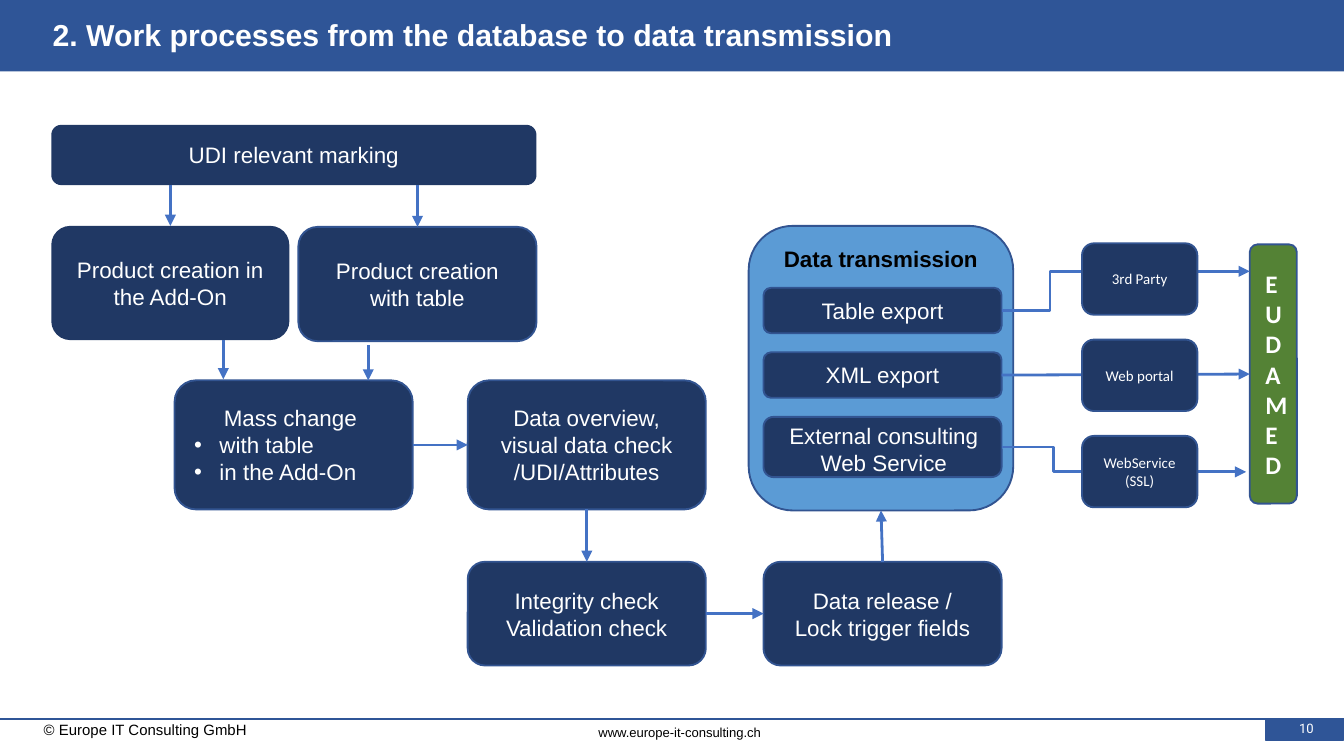
from lxml import etree
from pptx import Presentation
from pptx import util as u
from pptx.dml.color import RGBColor
from pptx.enum import shapes, text
from pptx.oxml import ns

COLORS = {
    "band": "2F5597", "navy": "203864", "sky": "5B9BD5", "green": "548235",
    "outline": "325491", "arrow": "4472C4", "white": "FFFFFF", "black": "000000",
}
COLORS = {name: RGBColor.from_string(value) for name, value in COLORS.items()}
CENTER, LEFT, RIGHT = text.PP_ALIGN.CENTER, text.PP_ALIGN.LEFT, text.PP_ALIGN.RIGHT
MIDDLE, TOP = text.MSO_ANCHOR.MIDDLE, text.MSO_ANCHOR.TOP
RECT = shapes.MSO_SHAPE.RECTANGLE
ROUND = shapes.MSO_SHAPE.ROUNDED_RECTANGLE
STRAIGHT, ELBOW = shapes.MSO_CONNECTOR.STRAIGHT, shapes.MSO_CONNECTOR.ELBOW

deck = Presentation()
deck.slide_width, deck.slide_height = u.Cm(25.4), u.Cm(14.29)
page = deck.slides.add_slide(deck.slide_layouts[5])


def add_box(place, lines=(), kind=ROUND, fill="navy", outline="outline", color="white",
            size=12, font="Arial", bold=False, align=CENTER, anchor=MIDDLE):
    lengths = [u.Cm(value) for value in place]
    if kind:
        box = page.shapes.add_shape(kind, *lengths)
        box.shadow.inherit = False
        box.fill.solid()
        box.fill.fore_color.rgb = COLORS[fill]
        if outline:
            box.line.color.rgb = COLORS[outline]
            box.line.width = u.Pt(1)
        else:
            box.line.fill.background()
    else:
        box = page.shapes.add_textbox(*lengths)
    frame = box.text_frame
    frame.word_wrap = True
    frame.vertical_anchor = anchor
    for number, line in enumerate(lines):
        para = frame.add_paragraph() if number else frame.paragraphs[0]
        para.alignment = align
        span = para.add_run()
        span.text = line
        for key, value in {"size": u.Pt(size), "name": font, "bold": bold}.items():
            setattr(span.font, key, value)
        span.font.color.rgb = COLORS[color]
    return box


def add_line(start, end, kind=STRAIGHT, color="arrow", arrow=True, bend=None):
    points = [u.Cm(value) for point in (start, end) if isinstance(point[0], (int, float))
              for value in point]
    points = points if len(points) == 4 else (points * 2 or [0] * 4)
    line = page.shapes.add_connector(kind, *points)
    for point, connect in ((start, line.begin_connect), (end, line.end_connect)):
        if not isinstance(point[0], (int, float)):
            connect(*point)
    line.line.color.rgb = COLORS[color]
    line.line.width = u.Pt(1.5)
    properties = line.element.spPr
    if arrow:
        etree.SubElement(properties.find(ns.qn("a:ln")), ns.qn("a:tailEnd"), type="triangle")
    if bend:
        guides = properties.find(ns.qn("a:prstGeom")).find(ns.qn("a:avLst"))
        etree.SubElement(guides, ns.qn("a:gd"), name="adj1", fmla=f"val {bend}")
    etree.SubElement(properties, ns.qn("a:effectLst"))


band = add_box((0, 0, 25.4, 1.35), kind=RECT, fill="band", outline=None)
title = page.shapes.title
title.element.addprevious(band.element)
for key, value in {"left": 0.74, "top": 0.23, "width": 21.97, "height": 0.91}.items():
    setattr(title, key, u.Cm(value))
title.text_frame.text = "2. Work processes from the database to data transmission"
title.text_frame.vertical_anchor = MIDDLE
para = title.text_frame.paragraphs[0]
para.alignment = LEFT
para.line_spacing = 0.9
for key, value in {"size": u.Pt(16.2), "name": "Arial", "bold": True}.items():
    setattr(para.font, key, value)
para.font.color.rgb = COLORS["white"]

add_box((23.93, 13.59, 1.45, 0.41), kind=RECT, fill="band", outline="band")
add_box((23.98, 13.5, 1.42, 0.54), ["10"], kind=None, size=7, font="Roboto")
add_line((0, 13.59), (25.4, 13.59), color="band", arrow=False)
footer = {"kind": None, "color": "black", "align": RIGHT}
add_box((0.25, 13.56, 4.67, 0.46), ["© Europe IT Consulting GmbH"], size=8, **footer)
add_box((10.77, 13.64, 3.86, 0.41), ["www.europe-it-consulting.ch"], size=7, **footer)

marking = add_box((0.97, 2.36, 9.17, 1.14), ["UDI relevant marking"], outline=None)
addon = add_box((0.97, 4.27, 4.5, 2.16), ["Product creation in the Add-On"], outline=None)
sheet = add_box((5.64, 4.29, 4.5, 2.16), ["Product creation with table"])
change = add_box((3.3, 7.19, 4.5, 2.44), ["Mass change ", "with table", "in the Add-On"])
for para in change.text_frame.paragraphs[1:]:
    para.alignment = LEFT
    layout = para._p.get_or_add_pPr()
    for key, value in {"marL": u.Cm(0.48), "indent": -u.Cm(0.48)}.items():
        layout.set(key, str(value))
    etree.SubElement(layout, ns.qn("a:buFont"), typeface="Arial")
    etree.SubElement(layout, ns.qn("a:buChar"), char="•")
overview = add_box((8.84, 7.19, 4.5, 2.44),
                   ["Data overview,", "visual data check", "/UDI/Attributes"])
check = add_box((8.84, 10.62, 4.5, 1.96), ["Integrity check", "Validation check"])
release = add_box((14.43, 10.62, 4.5, 1.96), ["Data release /", "Lock trigger fields"])

transmission = add_box((14.15, 4.27, 5, 5.38), ["Data transmission"], fill="sky",
                       color="black", bold=True, anchor=TOP)
exports = [
    add_box((14.43, 5.44 + 1.22 * row, 4.5, height), lines)
    for row, (height, lines) in enumerate(
        [(0.86, ["Table export"]), (0.86, ["XML export"]), (1.14, [])])
]
add_box((14.43, 7.85, 4.55, 1.8), ["External consulting Web Service"], kind=None, anchor=TOP)
eudamed = add_box((23.62, 4.62, 0.89, 4.9), "EUDAMED", fill="green", size=13.5,
                  font="Calibri", bold=True, align=LEFT)

for start, end in [
    ((3.22, 3.5), (addon, 0)),
    ((7.89, 3.5), (sheet, 0)),
    ((4.22, 6.43), (4.22, 7.17)),
    ((6.96, 6.53), (6.96, 7.19)),
    ((change, 3), (overview, 1)),
    ((overview, 2), (check, 0)),
    ((check, 3), (release, 1)),
    ((release, 0), (transmission, 2)),
    ((exports[1], 3), (eudamed, 1)),
]:
    add_line(start, end)
add_line((exports[0], 3), (23.62, 5.13), kind=ELBOW, bend=19500)
add_line((exports[2], 3), (23.55, 8.92), kind=ELBOW, bend=21100)

partners = [["3rd Party"], ["Web portal"], ["WebService", "(SSL)"]]
for row, lines in enumerate(partners):
    add_box((20.45, 4.6 + 1.82 * row, 2.18, 1.35), lines, size=8, font="Calibri")

deck.save("out.pptx")
